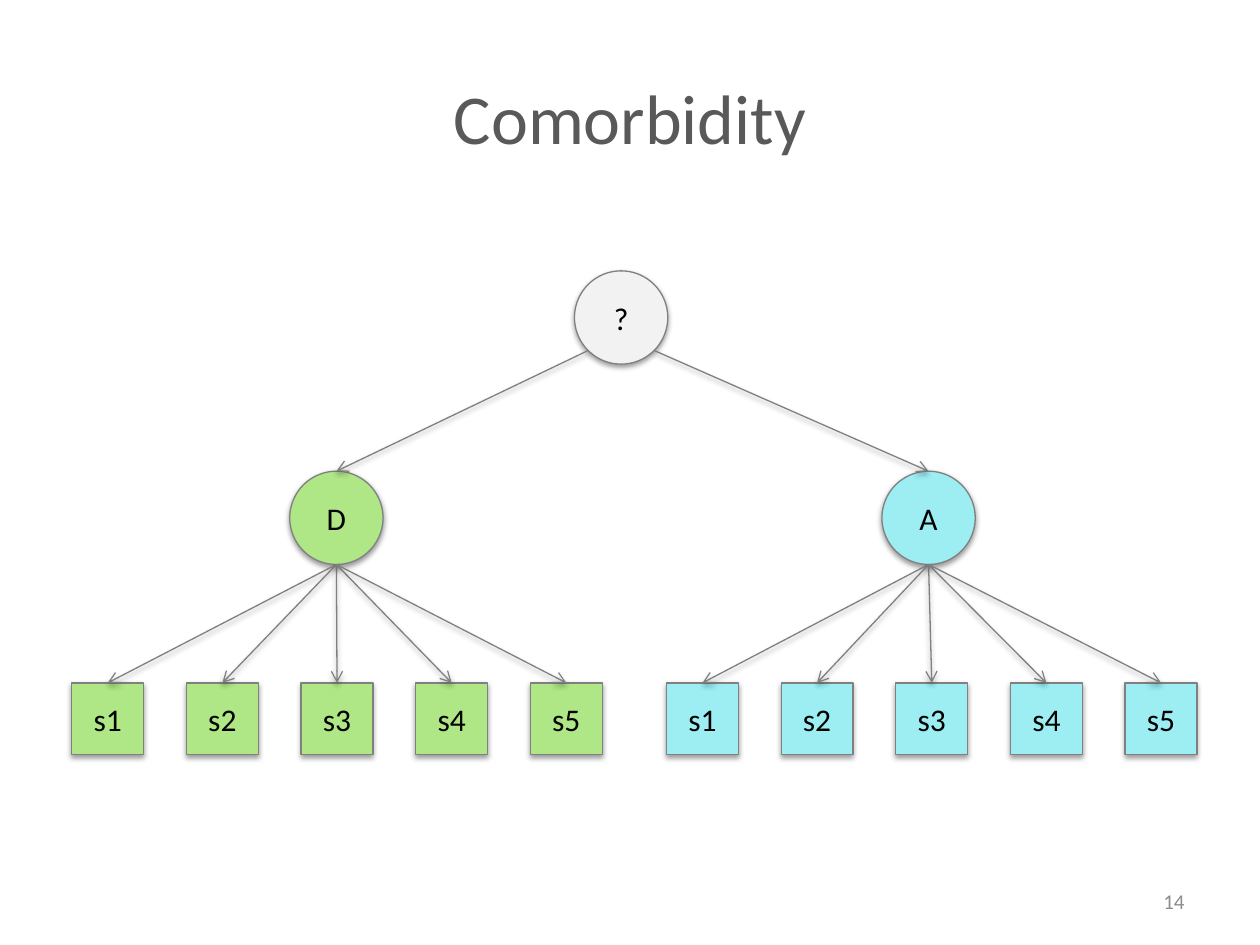
from math import cos, pi, sin

from lxml.etree import SubElement
from pptx import Presentation
from pptx.dml.color import RGBColor
from pptx.enum.shapes import MSO_CONNECTOR as Connector, MSO_SHAPE as Shape
from pptx.enum.text import MSO_ANCHOR as Anchor, PP_ALIGN as Align
from pptx.oxml.ns import qn
from pptx.util import Inches, Pt

GREEN, CYAN, PALE, GREY = "AFE686", "9CEEF3", "F2F2F2", "808080"
CIRCLE, SQUARE, STEP = 0.74, 0.57, 0.91
ROOT_TOP, DISORDER_TOP, SYMPTOM_TOP = 2.15, 3.74, 5.42
# label, colour, left of the circle, left of the first symptom
DISORDERS = [("D", GREEN, 2.3, 0.57), ("A", CYAN, 7, 5.29)]


def color(value):
    return RGBColor.from_string(value)


def write(shape, text, size, value, align=Align.CENTER):
    frame = shape.text_frame
    frame.word_wrap = True
    frame.vertical_anchor = Anchor.MIDDLE
    frame.text = text
    para = frame.paragraphs[0]
    para.alignment = align
    font = para.runs[0].font
    font.name, font.size = "Calibri", Pt(size)
    font.color.rgb = color(value)


def add_label(page, text, left, top, width, height, size, value, align):
    box = page.shapes.add_textbox(*map(Inches, (left, top, width, height)))
    write(box, text, size, value, align)


def outline(item):
    """Give a shape or connector the thin grey line and soft drop shadow."""
    item.line.color.rgb = color(GREY)
    item.line.width = Pt(0.75)
    properties = item._element.spPr
    effects = properties.find(qn("a:effectLst"))
    if effects is None:
        effects = SubElement(properties, qn("a:effectLst"))
    shadow = SubElement(effects, qn("a:outerShdw"), blurRad=str(Pt(3.1)),
                        dist=str(Pt(1.6)), dir="5400000", rotWithShape="0")
    tint = SubElement(shadow, qn("a:srgbClr"), val="000000")
    SubElement(tint, qn("a:alpha"), val="38000")


def add_node(page, kind, text, left, top, side, fill):
    node = page.shapes.add_shape(kind, *map(Inches, (left, top, side, side)))
    node.shadow.inherit = False
    node.fill.solid()
    node.fill.fore_color.rgb = color(fill)
    outline(node)
    write(node, text, 18, "000000")
    return node


def rim(circle, degrees):
    """Point on a circle's edge, measured clockwise from the right."""
    radius, angle = circle.width / 2, degrees * pi / 180
    return (round(circle.left + radius + radius * cos(angle)),
            round(circle.top + radius + radius * sin(angle)))


def add_arrow(page, start, target):
    arrow = page.shapes.add_connector(Connector.STRAIGHT, *start, *start)
    arrow.end_connect(target, 0)
    outline(arrow)
    SubElement(arrow.line._get_or_add_ln(), qn("a:tailEnd"), type="arrow")


def main():
    deck = Presentation()
    deck.slide_width, deck.slide_height = Inches(10), Inches(7.5)
    page = deck.slides.add_slide(deck.slide_layouts[6])

    add_label(page, "Comorbidity", 0.5, 0.3, 9, 1.25, 40, "595959", Align.CENTER)
    add_label(page, "14", 7.17, 6.95, 2.33, 0.4, 12, "8C8C8C", Align.RIGHT)

    arrows = []
    root = add_node(page, Shape.OVAL, "?", 4.56, ROOT_TOP, CIRCLE, PALE)
    for (label, fill, left, first), angle in zip(DISORDERS, (135, 45)):
        disorder = add_node(page, Shape.OVAL, label, left, DISORDER_TOP, CIRCLE, fill)
        arrows.append((rim(root, angle), disorder))
        for index in range(5):
            symptom = add_node(page, Shape.RECTANGLE, f"s{index + 1}",
                               first + index * STEP, SYMPTOM_TOP, SQUARE, fill)
            arrows.append((rim(disorder, 90), symptom))
    for start, target in arrows:
        add_arrow(page, start, target)

    deck.save("out.pptx")


if __name__ == "__main__":
    main()
